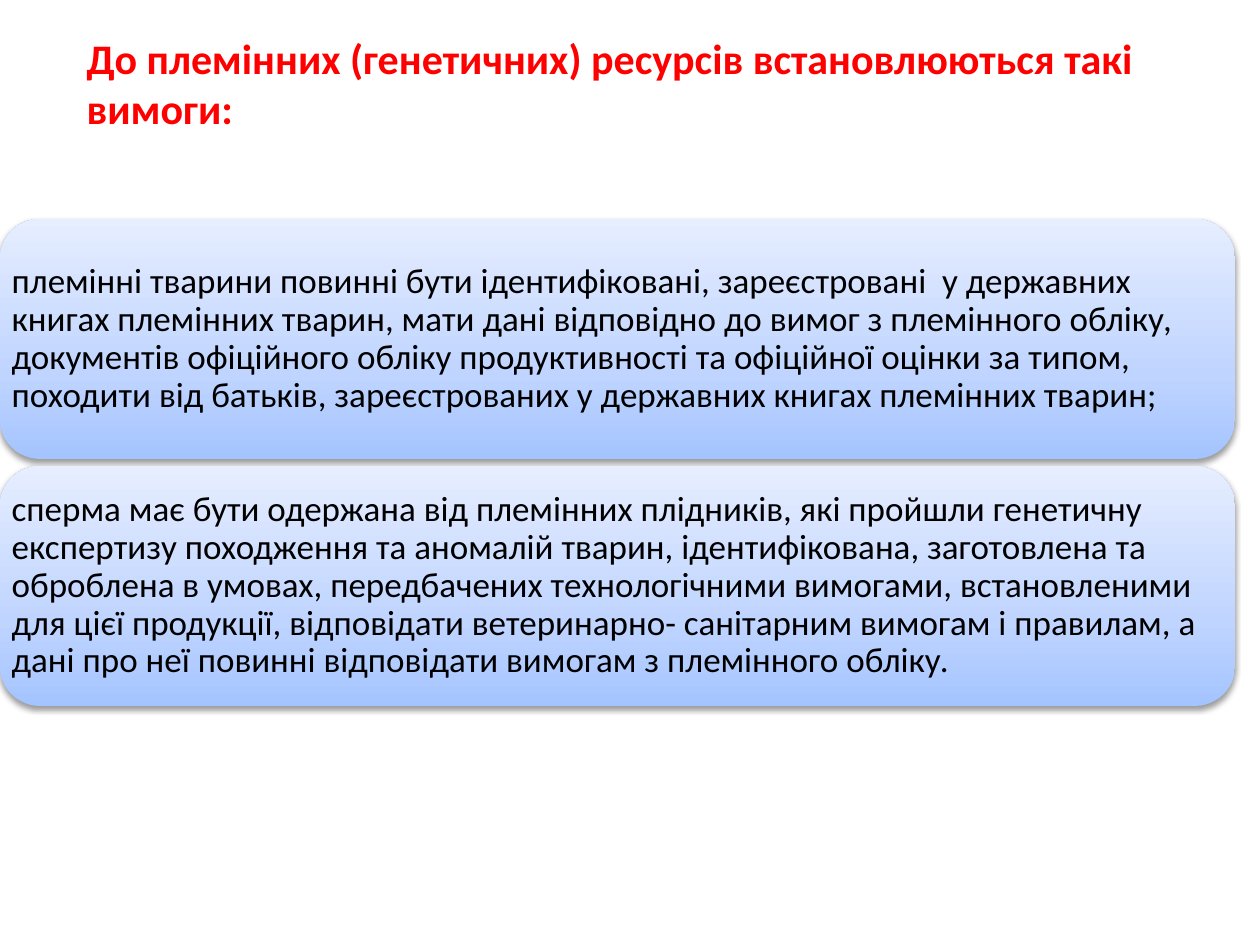
from copy import deepcopy

from lxml import etree
from pptx import Presentation
from pptx.dml.color import RGBColor
from pptx.enum.shapes import MSO_SHAPE
from pptx.enum.text import MSO_ANCHOR, MSO_AUTO_SIZE, PP_ALIGN
from pptx.oxml import parse_xml
from pptx.util import Emu, Pt

ROUNDED = MSO_SHAPE.ROUNDED_RECTANGLE
TOP, MIDDLE = MSO_ANCHOR.TOP, MSO_ANCHOR.MIDDLE
LEFT = PP_ALIGN.LEFT
NO_AUTOFIT = MSO_AUTO_SIZE.NONE

FONT = "Calibri"
COLORS = {
    "heading": "FF0000",
    "text": "000000",
    "bottom": "A4C4FF",
    "middle": "BFD4FF",
    "top": "E6EEFF",
    "shadow": "000000",
}
GRADIENT = [(0, "bottom"), (0.35, "middle"), (1, "top")]
SHADOW = (
    '<a:outerShdw xmlns:a="http://schemas.openxmlformats.org/drawingml/2006/main"'
    ' blurRad="40000" dist="20000" dir="5400000" rotWithShape="0">'
    f'<a:srgbClr val="{COLORS["shadow"]}"><a:alpha val="38000"/></a:srgbClr>'
    "</a:outerShdw>"
)
REQUIREMENTS = [
    "племінні тварини повинні бути ідентифіковані, зареєстровані  у державних "
    "книгах племінних тварин, мати дані відповідно до вимог з племінного обліку, "
    "документів офіційного обліку продуктивності та офіційної оцінки за типом, "
    "походити від батьків, зареєстрованих у державних книгах племінних тварин;",
    "сперма має бути одержана від племінних плідників, які пройшли генетичну "
    "експертизу походження та аномалій тварин, ідентифікована, заготовлена та "
    "оброблена в умовах, передбачених технологічними вимогами, встановленими "
    "для цієї продукції, відповідати ветеринарно- санітарним вимогам і правилам, а "
    "дані про неї повинні відповідати вимогам з племінного обліку.",
]
PANEL_TOP, PANEL_WIDTH, PANEL_HEIGHT, PANEL_GAP = 219, 1235, 240, 7


def px(length):
    return Emu(round(length * 914400 / 126))


def write(frame, text, size, color, bold=False):
    frame.text = text
    frame.word_wrap = True
    frame.auto_size = NO_AUTOFIT
    paragraph = frame.paragraphs[0]
    paragraph.alignment = LEFT
    font = paragraph.runs[0].font
    font.name, font.size, font.bold = FONT, Pt(size), bold
    font.color.rgb = RGBColor.from_string(COLORS[color])
    return paragraph


prs = Presentation()
prs.slide_width, prs.slide_height = px(1260), px(945)
slide = prs.slides.add_slide(prs.slide_layouts[5])

heading = slide.shapes.title
heading.left, heading.top, heading.width, heading.height = px(74), px(26), px(1101), px(115)
heading.text_frame.vertical_anchor = TOP
write(heading.text_frame, "До племінних (генетичних) ресурсів встановлюються такі вимоги:",
      24, "heading", bold=True)

for index, requirement in enumerate(REQUIREMENTS):
    top = PANEL_TOP + index * (PANEL_HEIGHT + PANEL_GAP)
    panel = slide.shapes.add_shape(ROUNDED, 0, px(top), px(PANEL_WIDTH), px(PANEL_HEIGHT))
    panel.line.fill.background()

    panel.fill.gradient()
    panel.fill.gradient_angle = 90
    stops = panel._element.spPr.find(".//{*}gsLst")
    stops.insert(1, deepcopy(stops[0]))
    for stop, (position, color) in zip(panel.fill.gradient_stops, GRADIENT):
        stop.position = position
        stop.color.rgb = RGBColor.from_string(COLORS[color])

    panel.shadow.inherit = False
    panel._element.spPr.find("{*}effectLst").append(parse_xml(SHADOW))

    frame = panel.text_frame
    frame.margin_left = frame.margin_right = frame.margin_top = frame.margin_bottom = 0
    frame.vertical_anchor = MIDDLE
    write(frame, requirement, 20, "text").line_spacing = 0.9

prs.save("out.pptx")
